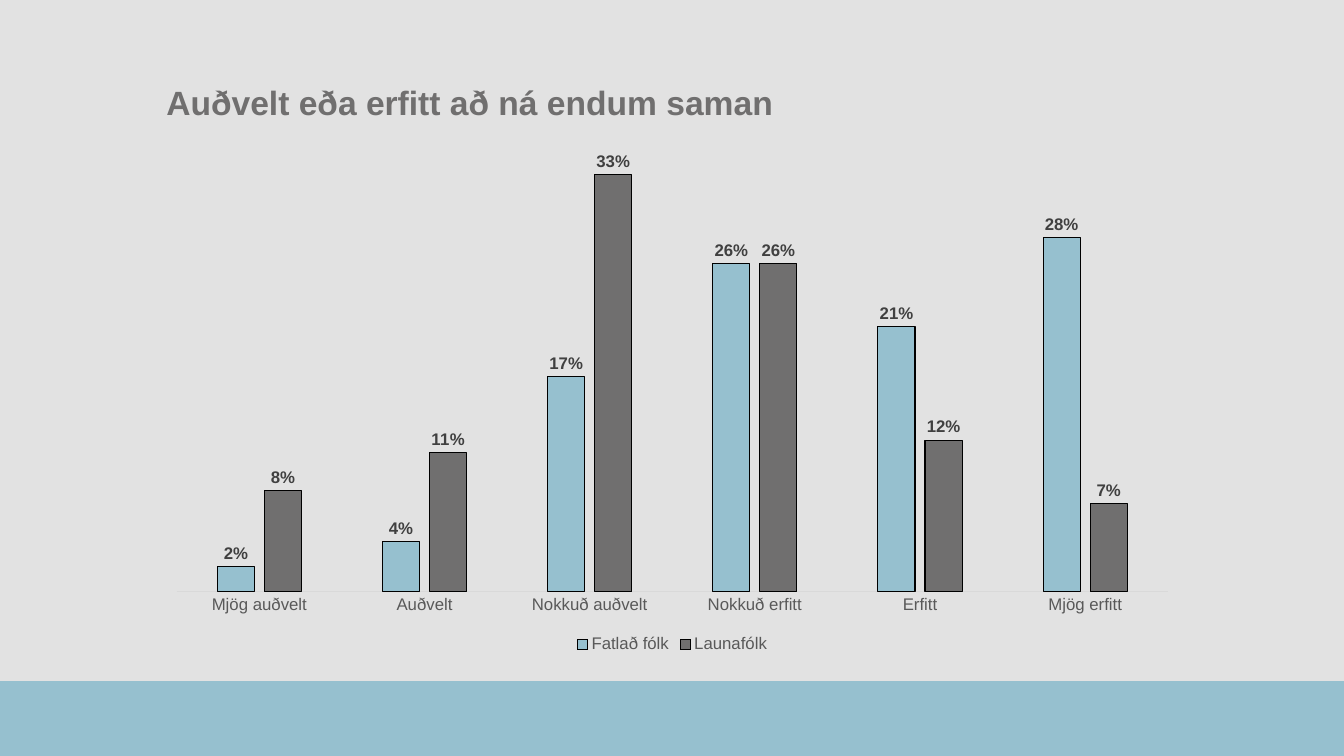
from pptx import Presentation
from pptx.chart.data import CategoryChartData
from pptx.dml.color import RGBColor
from pptx.enum.chart import XL_CHART_TYPE, XL_LABEL_POSITION, XL_LEGEND_POSITION, XL_TICK_MARK
from pptx.enum.shapes import MSO_SHAPE
from pptx.enum.text import MSO_ANCHOR, PP_ALIGN
from pptx.util import Pt

TITLE = "Auðvelt eða erfitt að ná endum saman"
ANSWERS = ["Mjög auðvelt", "Auðvelt", "Nokkuð auðvelt", "Nokkuð erfitt", "Erfitt", "Mjög erfitt"]
GROUPS = [
    ("Fatlað fólk", "blue", (0.02, 0.04, 0.17, 0.26, 0.21, 0.28)),
    ("Launafólk", "gray", (0.08, 0.11, 0.33, 0.26, 0.12, 0.07)),
]
COLORS = {
    "background": "E2E2E2",
    "blue": "96C0CF",
    "gray": "706F6F",
    "outline": "000000",
    "axis": "D9D9D9",
    "axis_text": "595959",
    "label": "404040",
}
FONT = "Arial"
PERCENT = "0%"
CLUSTERED = XL_CHART_TYPE.COLUMN_CLUSTERED
OUTSIDE_END = XL_LABEL_POSITION.OUTSIDE_END
BOTTOM = XL_LEGEND_POSITION.BOTTOM
NO_TICK = XL_TICK_MARK.NONE
RECTANGLE = MSO_SHAPE.RECTANGLE
MIDDLE = MSO_ANCHOR.MIDDLE
LEFT = PP_ALIGN.LEFT

SLIDE_W, SLIDE_H = 960, 540
BAND_H = 53.5
CONTENT_X, CONTENT_W = 111.6, 737.3
TITLE_Y, TITLE_H = 50.4, 49
CHART_Y, CHART_H = TITLE_Y + TITLE_H, 370


def rgb(name):
    return RGBColor.from_string(COLORS[name])


def style_font(font, size=12, color="axis_text", bold=False):
    font.name = FONT
    font.size = Pt(size)
    font.bold = bold
    font.color.rgb = rgb(color)


def write(frame, text, align=LEFT, anchor=MIDDLE, spacing=0.9, **font_format):
    frame.word_wrap = True
    frame.vertical_anchor = anchor
    paragraph = frame.paragraphs[0]
    paragraph.alignment = align
    paragraph.line_spacing = spacing
    run = paragraph.add_run()
    run.text = text
    style_font(run.font, **font_format)


def add_band(slide):
    band = slide.shapes.add_shape(RECTANGLE, 0, Pt(SLIDE_H - BAND_H), Pt(SLIDE_W), Pt(BAND_H))
    band.shadow.inherit = False
    band.fill.solid()
    band.fill.fore_color.rgb = rgb("blue")
    band.line.fill.background()


def add_title(slide):
    title = slide.shapes.title
    title.left, title.top = Pt(CONTENT_X), Pt(TITLE_Y)
    title.width, title.height = Pt(CONTENT_W), Pt(TITLE_H)
    write(title.text_frame, TITLE, size=24, color="gray", bold=True)


def add_answer_chart(slide):
    answers = CategoryChartData(number_format=PERCENT)
    answers.categories = ANSWERS
    for group, _, shares in GROUPS:
        answers.add_series(group, shares)
    chart = slide.shapes.add_chart(
        CLUSTERED, Pt(CONTENT_X), Pt(CHART_Y), Pt(CONTENT_W), Pt(CHART_H), answers
    ).chart
    chart.has_title = False
    style_font(chart.font, size=10, color="outline")

    chart.has_legend = True
    chart.legend.position = BOTTOM
    chart.legend.include_in_layout = False
    style_font(chart.legend.font)

    answer_axis = chart.category_axis
    answer_axis.major_tick_mark = NO_TICK
    answer_axis.minor_tick_mark = NO_TICK
    answer_axis.format.line.color.rgb = rgb("axis")
    answer_axis.format.line.width = Pt(0.75)
    style_font(answer_axis.tick_labels.font)

    share_axis = chart.value_axis
    share_axis.minimum_scale, share_axis.maximum_scale = 0, 0.35
    share_axis.has_major_gridlines = False
    share_axis.tick_labels.number_format = PERCENT
    share_axis.tick_labels.number_format_is_linked = False
    share_axis.visible = False

    columns = chart.plots[0]
    columns.gap_width = 219
    columns.overlap = -27
    columns.vary_by_categories = False
    for series, (_, color, _) in zip(columns.series, GROUPS):
        series.invert_if_negative = False
        series.format.fill.solid()
        series.format.fill.fore_color.rgb = rgb(color)
        series.format.line.color.rgb = rgb("outline")
        series.format.line.width = Pt(0.75)
        labels = series.data_labels
        labels.show_value = True
        labels.position = OUTSIDE_END
        labels.number_format = PERCENT
        labels.number_format_is_linked = False
        style_font(labels.font, color="label", bold=True)


def main():
    deck = Presentation()
    deck.slide_width, deck.slide_height = Pt(SLIDE_W), Pt(SLIDE_H)
    slide = deck.slides.add_slide(deck.slide_layouts[5])
    slide.background.fill.solid()
    slide.background.fill.fore_color.rgb = rgb("background")
    add_band(slide)
    add_title(slide)
    add_answer_chart(slide)
    deck.save("out.pptx")


if __name__ == "__main__":
    main()
